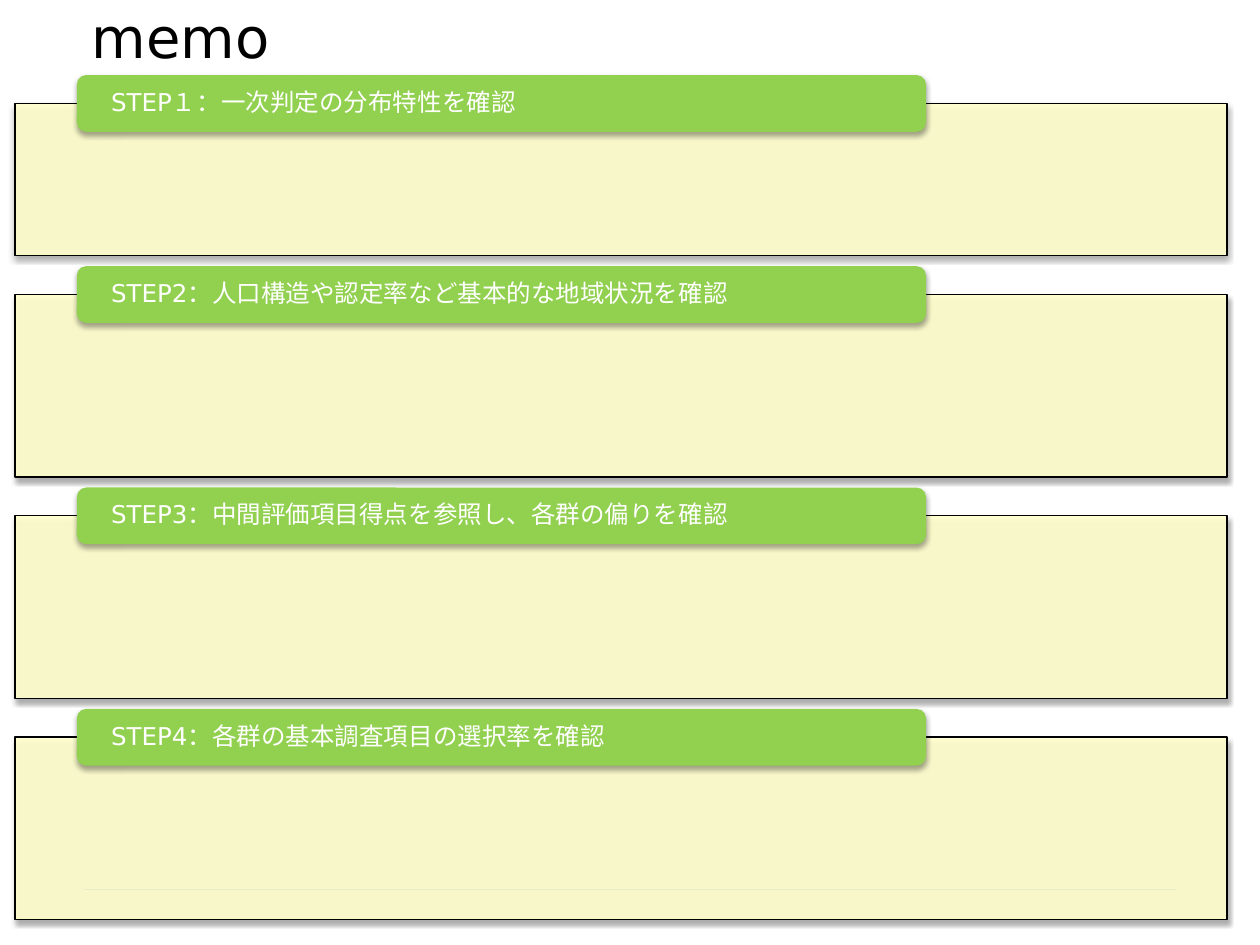
from lxml import etree
from pptx import Presentation
from pptx.dml.color import RGBColor
from pptx.enum import shapes, text
from pptx.oxml.ns import qn
from pptx.util import Pt

TITLE = "memo"
# label, heading, panel height
STEPS = [
    ("STEP１：", "一次判定の分布特性を確認", 87.1),
    ("STEP2：", "人口構造や認定率など基本的な地域状況を確認", 104.4),
    ("STEP3：", "中間評価項目得点を参照し、各群の偏りを確認", 104.4),
    ("STEP4：", "各群の基本調査項目の選択率を確認", 104.4),
]
THEME = dict(
    panel="FFFFCC", tab="92D050", ink="000000", tab_ink="FFFFFF", rule="3366FF",
    latin="DejaVu Sans", cjk="Noto Sans CJK JP", title_size=32, tab_size=14,
)
PANEL_X, PANEL_W, PANEL_TOP, PANEL_GAP = 8.6, 692.6, 59, 22.1
TAB_X, TAB_W, TAB_H, TAB_RISE = 43.9, 485.3, 32.4, 16.1
RULE_X1, RULE_X2, RULE_Y = 48, 672, 508.3


def rgb(name):
    return RGBColor.from_string(THEME[name])


def add_shadow(sp):
    """Soft shadow straight below the shape."""
    effects = sp._element.spPr.find(qn("a:effectLst"))
    shadow = etree.SubElement(effects, qn("a:outerShdw"), blurRad=str(Pt(3.1)),
                              dist=str(Pt(1.8)), dir="5400000", rotWithShape="0")
    color = etree.SubElement(shadow, qn("a:srgbClr"), val=THEME["ink"])
    etree.SubElement(color, qn("a:alpha"), val="35000")


def add_box(s, kind, x, y, w, h, fill):
    sp = s.shapes.add_shape(kind, Pt(x), Pt(y), Pt(w), Pt(h))
    sp.shadow.inherit = False
    sp.fill.solid()
    sp.fill.fore_color.rgb = rgb(fill)
    add_shadow(sp)
    return sp


def add_panel(s, y, h):
    sp = add_box(s, shapes.MSO_SHAPE.RECTANGLE, PANEL_X, y, PANEL_W, h, "panel")
    sp.line.color.rgb = rgb("ink")
    sp.line.width = Pt(0.75)
    color = sp._element.spPr.find(qn("a:solidFill"))[0]
    etree.SubElement(color, qn("a:alpha"), val="90000")


def add_tab(s, y, label, heading):
    sp = add_box(s, shapes.MSO_SHAPE.ROUNDED_RECTANGLE, TAB_X, y, TAB_W, TAB_H, "tab")
    sp.line.fill.background()
    tf = sp.text_frame
    tf.word_wrap = True
    tf.vertical_anchor = text.MSO_ANCHOR.MIDDLE
    tf.margin_left = tf.margin_right = Pt(18)
    tf.margin_top = tf.margin_bottom = 0
    p = tf.paragraphs[0]
    p.alignment = text.PP_ALIGN.LEFT
    p.line_spacing = 0.9
    p.font.size = Pt(THEME["tab_size"])
    p.font.color.rgb = rgb("tab_ink")
    for words, font in ((label, "latin"), (heading, "cjk")):
        r = p.add_run()
        r.text = words
        r.font.name = THEME[font]
        etree.SubElement(r._r.get_or_add_rPr(), qn("a:ea"), typeface=THEME["cjk"])


def add_title(s):
    tf = s.shapes.add_textbox(Pt(45.4), Pt(-15.8), Pt(630), Pt(59)).text_frame
    tf.word_wrap = True
    tf.vertical_anchor = text.MSO_ANCHOR.BOTTOM
    p = tf.paragraphs[0]
    p.text = TITLE
    p.font.name = THEME["latin"]
    p.font.size = Pt(THEME["title_size"])
    p.font.color.rgb = rgb("ink")


def add_rule(s):
    line = s.shapes.add_connector(shapes.MSO_CONNECTOR.STRAIGHT, Pt(RULE_X1), Pt(RULE_Y),
                                  Pt(RULE_X2), Pt(RULE_Y))
    line.line.color.rgb = rgb("rule")
    line.line.width = Pt(0.25)
    etree.SubElement(line._element.spPr, qn("a:effectLst"))


def main():
    prs = Presentation()
    prs.slide_width, prs.slide_height = Pt(720), Pt(540)
    s = prs.slides.add_slide(prs.slide_layouts[6])
    add_rule(s)
    add_title(s)
    y = PANEL_TOP
    for label, heading, h in STEPS:
        add_panel(s, y, h)
        add_tab(s, y - TAB_RISE, label, heading)
        y += h + PANEL_GAP
    prs.save("out.pptx")


if __name__ == "__main__":
    main()
